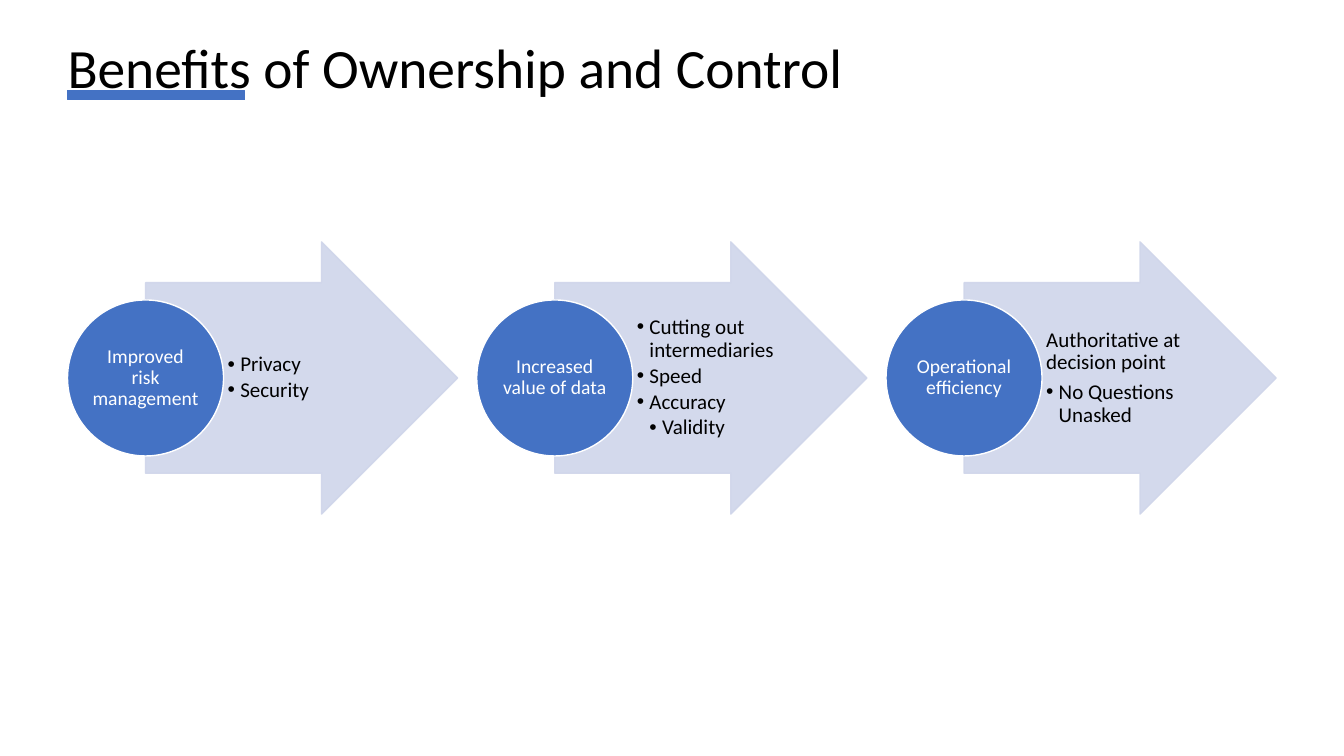
from lxml import etree
from pptx import Presentation
from pptx.dml.color import RGBColor
from pptx.enum import shapes, text
from pptx.oxml.ns import qn
from pptx.util import Pt

BLUE, PALE, WHITE, BLACK = "4472C4", "CFD5EA", "FFFFFF", "000000"
MARGIN, HANG = 48.24, 9
STEPS = [  # circle label, then (level, wording); level 0 has no bullet
    ("Improved risk management", [(1, "Privacy"), (1, "Security")]),
    ("Increased value of data",
     [(1, "Cutting out intermediaries"), (1, "Speed"), (1, "Accuracy"), (2, "Validity")]),
    ("Operational efficiency",
     [(0, "Authoritative at decision point"), (1, "No Questions Unasked")]),
]


def rgb(color):
    return RGBColor.from_string(color)


def add_alpha(fill_parent, percent):
    """Make the solid fill found under an element partly transparent."""
    color = fill_parent.find(qn("a:solidFill"))[0]
    etree.SubElement(color, qn("a:alpha")).set("val", str(percent * 1000))


def add_shape(slide, kind, left, top, width, height, fill, line, weight=1.0):
    sp = slide.shapes.add_shape(kind, Pt(left), Pt(top), Pt(width), Pt(height))
    sp.shadow.inherit = False
    sp.fill.solid()
    sp.fill.fore_color.rgb = rgb(fill)
    sp.line.color.rgb = rgb(line)
    sp.line.width = Pt(weight)
    return sp


def write(sp, lines, size, color=BLACK, align=text.PP_ALIGN.LEFT,
          anchor=text.MSO_ANCHOR.MIDDLE, insets=(0, 0, 0, 0)):
    """Fill a shape with (level, wording) lines."""
    tf = sp.text_frame
    tf.word_wrap = True
    tf.vertical_anchor = anchor
    tf.margin_left, tf.margin_top, tf.margin_right, tf.margin_bottom = map(Pt, insets)
    for i, (level, wording) in enumerate(lines):
        p = tf.paragraphs[0] if i == 0 else tf.add_paragraph()
        p.alignment = align
        p.line_spacing = 0.9
        if i < len(lines) - 1:
            p.space_after = Pt(size * (0.15 if level else 0.35))
        if level:
            p.level = level
            pPr = p._p.get_or_add_pPr()
            pPr.set("marL", str(Pt(HANG * level)))
            pPr.set("indent", str(Pt(-HANG)))
            etree.SubElement(pPr, qn("a:buFont")).set("typeface", "Arial")
            etree.SubElement(pPr, qn("a:buChar")).set("char", "•")
        r = p.add_run()
        r.text = wording
        r.font.name = "Calibri"
        r.font.size = Pt(size)
        r.font.color.rgb = rgb(color)


def add_title(slide, left, top, width, height, wording):
    add_shape(slide, shapes.MSO_SHAPE.RECTANGLE, left, top + 36, 126.72, 6.48,
              BLUE, BLUE, 0.75)
    box = slide.shapes.add_textbox(Pt(left), Pt(top), Pt(width), Pt(height))
    write(box, [(0, wording)], 39.6, anchor=text.MSO_ANCHOR.TOP)


def add_step(slide, left, top, width, height, label, points):
    """Draw an arrow with its points and a circle over its tail."""
    circle = width * 0.4
    shaft = 0.7
    arrow = add_shape(slide, shapes.MSO_SHAPE.RIGHT_ARROW, left + circle / 2, top,
                      width - circle / 2, height, PALE, PALE)
    arrow.adjustments[0], arrow.adjustments[1] = shaft, 0.5
    spPr = arrow._element.spPr
    add_alpha(spPr, 90)
    add_alpha(spPr.find(qn("a:ln")), 90)

    box = slide.shapes.add_textbox(Pt(left + circle), Pt(top + height * (1 - shaft) / 2),
                                   Pt(108.72), Pt(height * shaft))
    write(box, points, 15, insets=(2.88, 0.72, 1.44, 0.72))

    disc = add_shape(slide, shapes.MSO_SHAPE.OVAL, left, top + (height - circle) / 2,
                     circle, circle, BLUE, WHITE)
    write(disc, [(0, label)], 14, WHITE, text.PP_ALIGN.CENTER,
          insets=(0.72, 0.72, 0.72, 0.72))


def main():
    prs = Presentation()
    prs.slide_width, prs.slide_height = Pt(960), Pt(540)
    slide = prs.slides.add_slide(prs.slide_layouts[6])
    add_title(slide, MARGIN, 28.8, 864, 38.88, "Benefits of Ownership and Control")
    for i, (label, points) in enumerate(STEPS):
        add_step(slide, MARGIN + i * 292.32, 172.8, 278.64, 194.4, label, points)
    prs.save("out.pptx")


if __name__ == "__main__":
    main()
